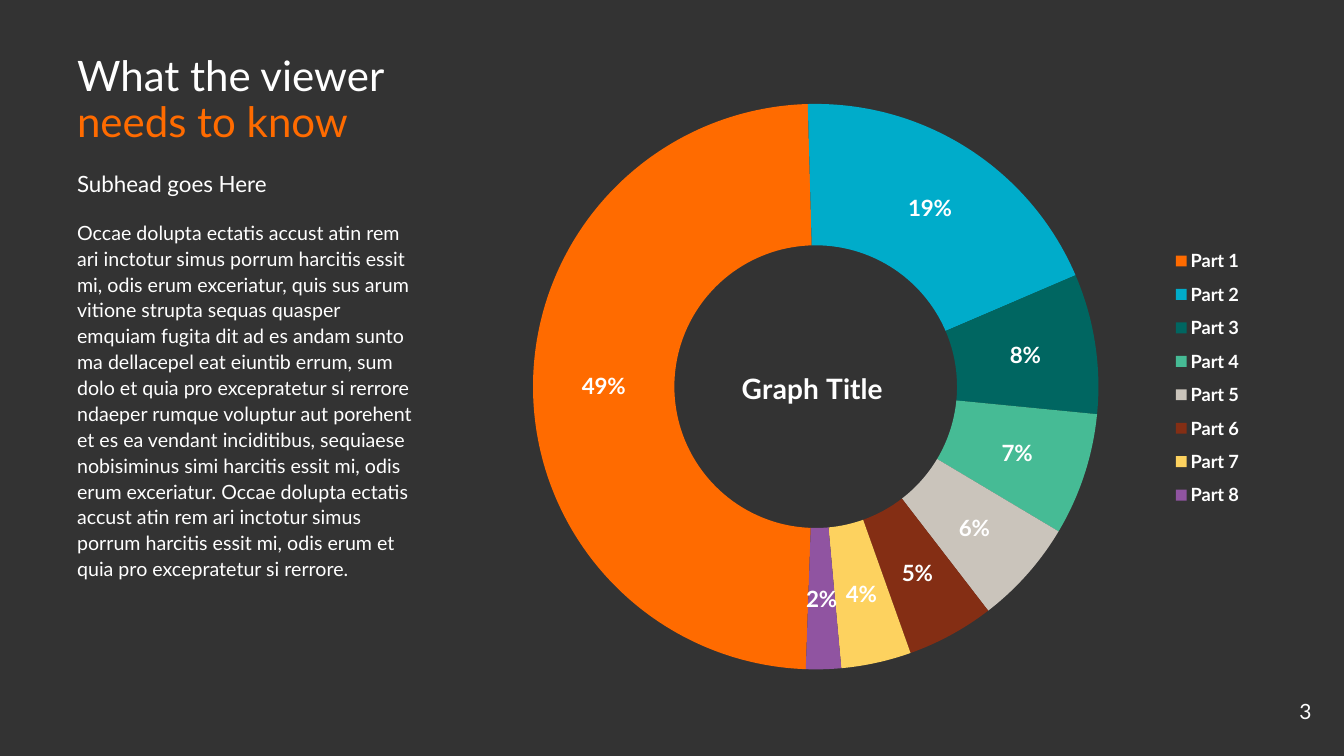
from dataclasses import dataclass

from lxml.etree import SubElement
from pptx import Presentation
from pptx.chart.data import CategoryChartData
from pptx.dml.color import RGBColor
from pptx.enum.chart import XL_CHART_TYPE as ChartType, XL_LEGEND_POSITION as LegendSide
from pptx.enum.text import MSO_ANCHOR as Anchor, PP_ALIGN as Align
from pptx.oxml.ns import qn
from pptx.util import Pt


@dataclass(frozen=True)
class Theme:
    font: str = "Lato"
    background: str = "333333"
    text: str = "FFFFFF"
    accent: str = "FF6B00"
    slices: tuple = ("FF6B00", "00ACCA", "006661", "46BB95",
                     "CAC4BB", "842E14", "FDD25F", "9054A1")
    title: int = 30
    graph_title: int = 20
    subhead: int = 16
    slice_label: int = 16
    page_number: int = 15
    body: int = 14
    legend: int = 13


class SlideBuilder:
    def __init__(self, slide, theme):
        self.slide = slide
        self.theme = theme
        slide.background.fill.solid()
        slide.background.fill.fore_color.rgb = RGBColor.from_string(theme.background)

    def style(self, font, size, color=None, bold=False):
        font.name = self.theme.font
        font.size = Pt(size)
        font.bold = bold
        font.color.rgb = RGBColor.from_string(color or self.theme.text)

    def text(self, box, runs, size, spacing=1.0, align=Align.LEFT, anchor=Anchor.TOP):
        """Add one paragraph; runs are (words, color) pairs."""
        frame = self.slide.shapes.add_textbox(*map(Pt, box)).text_frame
        frame.word_wrap = True
        frame.vertical_anchor = anchor
        paragraph = frame.paragraphs[0]
        paragraph.alignment = align
        paragraph.line_spacing = spacing
        for words, color in runs:
            run = paragraph.add_run()
            run.text = words
            self.style(run.font, size, color)

    @staticmethod
    def place(part, inner=False, **fractions):
        """Give a chart part a manual layout in fractions of the chart."""
        for old in part.findall(qn("c:layout")):
            part.remove(old)
        layout = SubElement(part, qn("c:layout"))
        overlay = part.find(qn("c:overlay"))
        if overlay is None:
            part.insert(0, layout)
        else:
            overlay.addprevious(layout)
        manual = SubElement(layout, qn("c:manualLayout"))
        if inner:
            SubElement(manual, qn("c:layoutTarget")).set("val", "inner")
        for axis in "xy":
            SubElement(manual, qn(f"c:{axis}Mode")).set("val", "edge")
        for side, fraction in fractions.items():
            SubElement(manual, qn(f"c:{side}")).set("val", str(fraction))

    def doughnut(self, box, title, shares, start_angle, hole_size):
        theme = self.theme
        data = CategoryChartData()
        data.categories = [f"Part {n}" for n in range(1, len(shares) + 1)]
        data.add_series("Series 1", shares)
        chart = self.slide.shapes.add_chart(
            ChartType.DOUGHNUT, *map(Pt, box), data).chart
        self.style(chart.font, theme.legend)

        # Title in the hole
        heading = chart.chart_title.text_frame.paragraphs[0].add_run()
        heading.text = title
        self.style(heading.font, theme.graph_title, bold=True)
        self.place(chart._chartSpace.chart.find(qn("c:title")), x=0.478, y=0.52)

        # Legend
        chart.has_legend = True
        chart.legend.position = LegendSide.LEFT
        chart.legend.include_in_layout = False
        self.style(chart.legend.font, theme.legend, bold=True)
        self.place(chart.legend._element, x=0.9, y=0.36, w=0.09, h=0.36)

        # Ring and slices
        plot = chart.plots[0]
        plot.vary_by_categories = True
        ring = plot._element
        ring.find(qn("c:firstSliceAng")).set("val", str(start_angle))
        ring.find(qn("c:holeSize")).set("val", str(hole_size))
        self.place(ring.getparent(), inner=True, x=0.276, y=0.186, w=0.561, h=0.73)
        for index, color in enumerate(theme.slices):
            slice_format = plot.series[0].points[index].format
            slice_format.fill.solid()
            slice_format.fill.fore_color.rgb = RGBColor.from_string(color)
            slice_format.line.fill.background()

        # Percent labels
        labels = plot.series[0].data_labels
        labels.show_percentage = True
        labels.show_value = False
        labels.number_format = "0%"
        labels.number_format_is_linked = False
        self.style(labels.font, theme.slice_label, bold=True)


BODY = (
    "Occae dolupta ectatis accust atin rem ari inctotur simus porrum harcitis "
    "essit mi, odis erum exceriatur, quis sus arum vitione strupta sequas quasper "
    "emquiam fugita dit ad es andam sunto ma dellacepel eat eiuntib errum, sum "
    "dolo et quia pro excepratetur si rerrore ndaeper rumque voluptur aut porehent "
    "et es ea vendant inciditibus, sequiaese nobisiminus simi harcitis essit mi, "
    "odis erum exceriatur. Occae dolupta ectatis accust atin rem ari inctotur "
    "simus porrum harcitis essit mi, odis erum et quia pro excepratetur si rerrore."
)


def main():
    deck = Presentation()
    deck.slide_width, deck.slide_height = Pt(960), Pt(540)
    theme = Theme()
    page = SlideBuilder(deck.slides.add_slide(deck.slide_layouts[6]), theme)

    # Page number
    page.text((880, 495.5, 64, 25), [("3", theme.text)], theme.page_number,
              align=Align.RIGHT)

    # Chart
    page.doughnut((182, -29, 720, 554), "Graph Title",
                  (49, 19, 8, 7, 6, 5, 4, 2), start_angle=182, hole_size=62)

    # Text column
    page.text((48, 120, 287, 30), [("Subhead goes Here", theme.text)],
              theme.subhead, spacing=0.9)
    page.text((48, 152.5, 259, 294), [(BODY, theme.text)], theme.body, spacing=1.1)
    page.text((48, 40, 287, 64),
              [("What the viewer ", theme.text), ("needs to know", theme.accent)],
              theme.title, spacing=0.9, anchor=Anchor.MIDDLE)

    deck.save("out.pptx")


if __name__ == "__main__":
    main()
